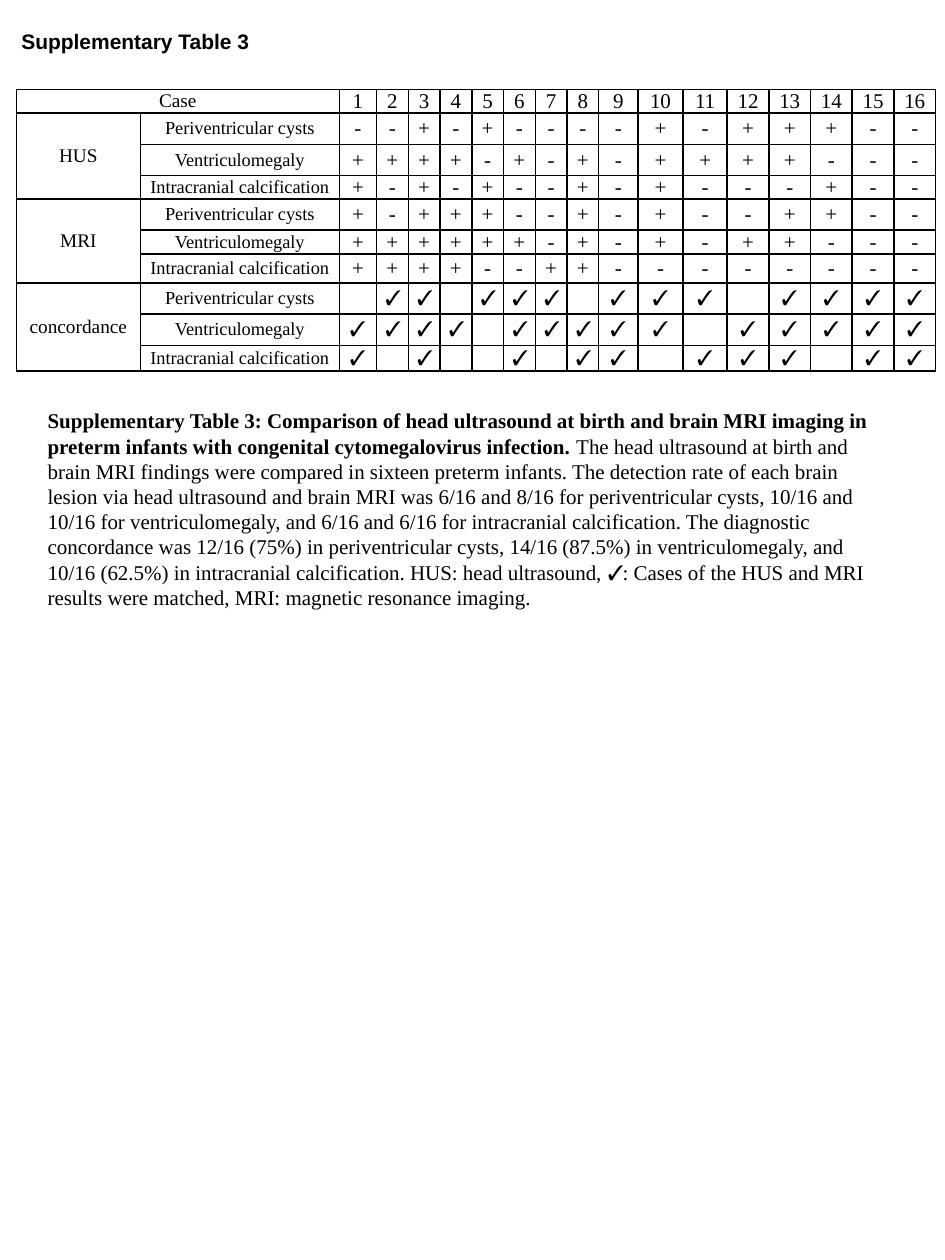
from typing import NamedTuple

from lxml import etree
from pptx import Presentation
from pptx import util as u
from pptx.dml.color import RGBColor
from pptx.enum import text
from pptx.oxml.ns import qn

COLORS = {"ink": "000000", "paper": "FFFFFF"}
SERIF, SANS = "Times New Roman", "Arial"
COLS = [2.5, 4.01, 0.75] + [0.64] * 7 + [0.79, 0.91, 0.89] + [0.84] * 5
ROWS = [0.48, 0.63, 0.63, 0.46, 0.63, 0.48, 0.58, 0.63, 0.63, 0.48]
CELL = {
    "margin_left": u.Cm(0.18),
    "margin_right": u.Cm(0.18),
    "margin_top": 0,
    "margin_bottom": 0,
    "vertical_anchor": text.MSO_ANCHOR.MIDDLE,
}
PLAIN_TABLE = {"first_row": False, "horz_banding": False}


class Run(NamedTuple):
    text: str
    size: float = 12
    font: str = SERIF
    bold: bool = False


class Box(NamedTuple):
    left: float
    top: float
    width: float
    height: float
    wrap: bool
    runs: list[Run]


class Method(NamedTuple):
    name: str
    results: list[str]


LESIONS = ["Periventricular cysts", "Ventriculomegaly", "Intracranial calcification"]
HUS = Method("HUS", ["--+-+----+-+++--", "++++-+-+-++++---", "+-+-+--+-+---+--"])
MRI = Method("MRI", ["+-+++--+-+--++--", "++++++-+-+-++---", "++++--++--------"])
CONCORDANCE = Method(
    "concordance",
    ["".join("✓" if a == b else " " for a, b in zip(*pair))
     for pair in zip(HUS.results, MRI.results)],
)

TITLE = Box(0.18, 0.46, 5.16, 0.76, False,
            [Run("Supplementary Table 3", font=SANS, bold=True)])
CAPTION = Box(0.71, 8.1, 17.5, 4.37, True, [
    Run("Supplementary Table 3: Comparison of head ultrasound at birth and brain MRI "
        "imaging in preterm infants with congenital cytomegalovirus infection. ", bold=True),
    Run("The head ultrasound at birth and brain MRI findings were compared in sixteen "
        "preterm infants. The detection rate of each brain lesion via head ultrasound and "
        "brain MRI was 6/16 and 8/16 for periventricular cysts, 10/16 and 10/16 for "
        "ventriculomegaly, and 6/16 and 6/16 for intracranial calcification. The diagnostic "
        "concordance was 12/16 (75%) in periventricular cysts, 14/16 (87.5%) in "
        "ventriculomegaly, and 10/16 (62.5%) in intracranial calcification. HUS: head "
        "ultrasound, ✓: Cases of the HUS and MRI results were matched, MRI: magnetic "
        "resonance imaging."),
])


def apply(target, values: dict) -> None:
    for name, value in values.items():
        setattr(target, name, value)


def add_run(p, run: Run) -> None:
    r = p.add_run()
    r.text = run.text
    apply(r.font, {"size": u.Pt(run.size), "name": run.font, "bold": run.bold})
    r.font.color.rgb = RGBColor.from_string(COLORS["ink"])


def add_box(slide, box: Box) -> None:
    sp = slide.shapes.add_textbox(*map(u.Cm, box[:4]))
    tf = sp.text_frame
    tf.word_wrap = box.wrap
    tf.auto_size = text.MSO_AUTO_SIZE.SHAPE_TO_FIT_TEXT
    for run in box.runs:
        add_run(tf.paragraphs[0], run)


def style_cell(cell) -> None:
    apply(cell, CELL)
    tc_pr = cell._tc.get_or_add_tcPr()
    for side in ("lnL", "lnR", "lnT", "lnB"):
        ln = etree.SubElement(tc_pr, qn(f"a:{side}"), w=str(u.Pt(1)))
        fill = etree.SubElement(ln, qn("a:solidFill"))
        etree.SubElement(fill, qn("a:srgbClr"), val=COLORS["ink"])
    cell.fill.background()
    p = cell.text_frame.paragraphs[0]
    p.alignment = text.PP_ALIGN.CENTER
    etree.SubElement(p._p, qn("a:endParaRPr"), sz="1200")


def fill_cell(cell, value: str, size: float = 12) -> None:
    if value.strip():
        add_run(cell.text_frame.paragraphs[0], Run(value, size))


def add_results(slide, methods: list[Method]) -> None:
    frame = slide.shapes.add_table(
        len(ROWS), len(COLS), u.Cm(0.33), u.Cm(1.8), u.Cm(sum(COLS)), u.Cm(sum(ROWS)))
    table = frame.table
    apply(table, PLAIN_TABLE)
    for column, width in zip(table.columns, COLS):
        column.width = u.Cm(width)
    for row, height in zip(table.rows, ROWS):
        row.height = u.Cm(height)
    for cell in table.iter_cells():
        style_cell(cell)

    table.cell(0, 0).merge(table.cell(0, 1))
    fill_cell(table.cell(0, 0), "Case", 11)
    for case in range(1, 17):
        fill_cell(table.cell(0, case + 1), str(case))

    for m, method in enumerate(methods):
        top = 1 + m * len(LESIONS)
        table.cell(top, 0).merge(table.cell(top + len(LESIONS) - 1, 0))
        fill_cell(table.cell(top, 0), method.name, 11)
        for i, (lesion, marks) in enumerate(zip(LESIONS, method.results), top):
            fill_cell(table.cell(i, 1), lesion, 10.5)
            for j, mark in enumerate(marks, 2):
                fill_cell(table.cell(i, j), mark)


def main() -> None:
    prs = Presentation()
    apply(prs, {"slide_width": u.Cm(19.05), "slide_height": u.Cm(25.4)})
    slide = prs.slides.add_slide(prs.slide_layouts[6])
    slide.background.fill.solid()
    slide.background.fill.fore_color.rgb = RGBColor.from_string(COLORS["paper"])
    add_results(slide, [HUS, MRI, CONCORDANCE])
    add_box(slide, CAPTION)
    add_box(slide, TITLE)
    prs.save("out.pptx")


if __name__ == "__main__":
    main()
